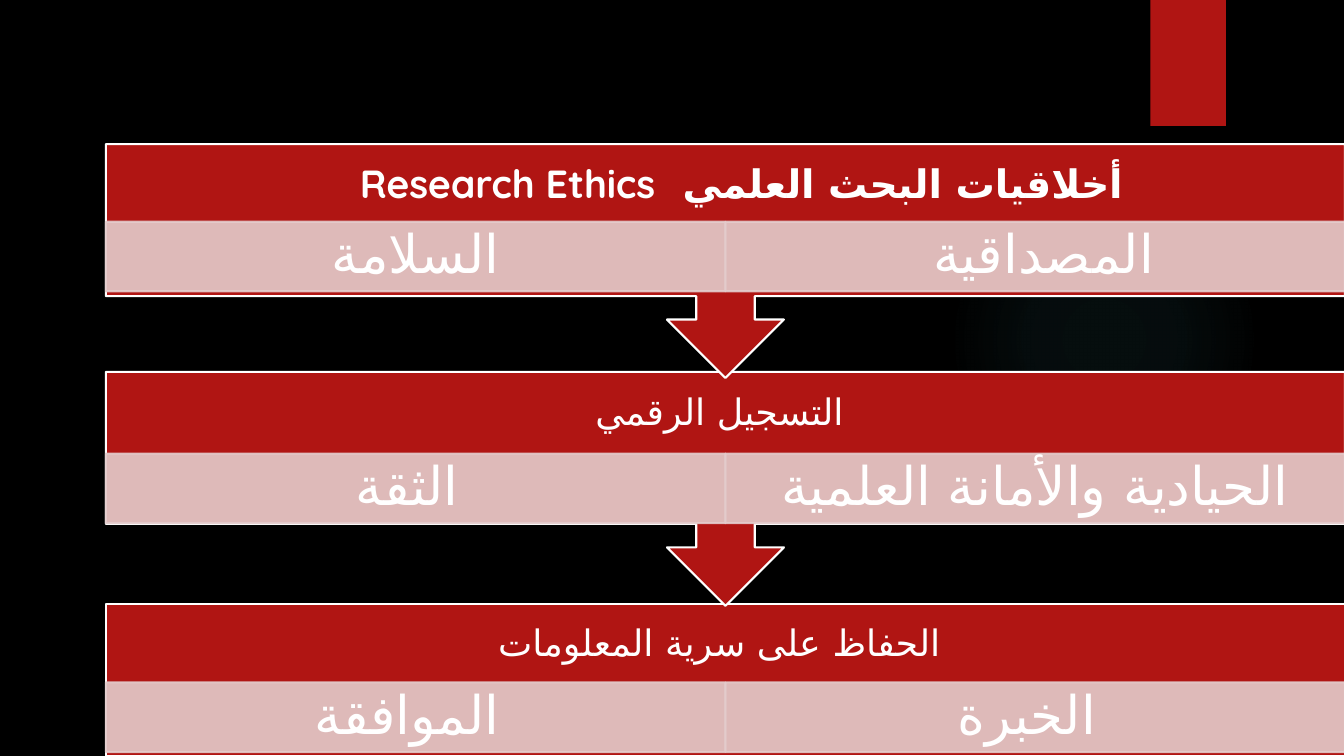
from dataclasses import dataclass

from lxml import etree
from pptx import Presentation
from pptx.dml.color import RGBColor
from pptx.enum.shapes import MSO_SHAPE as Shape
from pptx.enum.text import MSO_ANCHOR as Anchor, PP_ALIGN as Align
from pptx.oxml import parse_xml
from pptx.oxml.ns import qn
from pptx.util import Inches, Pt


@dataclass(frozen=True)
class Theme:
    black: RGBColor = RGBColor.from_string("000000")
    red: RGBColor = RGBColor.from_string("B01513")
    pink: RGBColor = RGBColor.from_string("E4CCCC")
    white: RGBColor = RGBColor.from_string("FFFFFF")
    glow: str = "50B9C1"
    font: str = "Quicksand"
    arabic_font: str = "DejaVu Sans"
    title_size: int = 28
    header_size: int = 26
    cell_size: int = 38


theme = Theme()


def add_block(shape_kind, left, top, width, height, color, line_color=None):
    block = page.shapes.add_shape(
        shape_kind, Inches(left), Inches(top), Inches(width), Inches(height))
    block.shadow.inherit = False
    block.fill.solid()
    block.fill.fore_color.rgb = color
    if line_color is None:
        block.line.fill.background()
    else:
        block.line.color.rgb = line_color
        block.line.width = Pt(1.5)
    return block


def write(box, text, insets, size, bold=False, rtl=False):
    """Centre one line of text; insets are left, top, right, bottom."""
    frame = box.text_frame
    left, top, right, bottom = map(Inches, insets)
    frame_format = {"word_wrap": True, "vertical_anchor": Anchor.MIDDLE,
                    "margin_left": left, "margin_top": top,
                    "margin_right": right, "margin_bottom": bottom}
    for name, value in frame_format.items():
        setattr(frame, name, value)
    para = frame.paragraphs[0]
    para.alignment = Align.CENTER
    para.line_spacing = 0.9
    if rtl:
        para._p.get_or_add_pPr().set("rtl", "1")
    span = para.add_run()
    span.text = text
    for name, value in {"name": theme.font, "size": Pt(size), "bold": bold}.items():
        setattr(span.font, name, value)
    span.font.color.rgb = theme.white
    complex_font = etree.SubElement(span._r.get_or_add_rPr(), qn("a:cs"))
    complex_font.set("typeface", theme.arabic_font)


deck = Presentation()
deck.slide_width, deck.slide_height = Inches(13.33), Inches(7.5)
page = deck.slides.add_slide(deck.slide_layouts[6])
page.background.fill.solid()
page.background.fill.fore_color.rgb = theme.black

# Faint round glow and the red tab at the top
glow = add_block(Shape.OVAL, 9.41, 1.83, 3.08, 3.08, theme.black)
stops = "".join(
    f'<a:gs pos="{place * 1000}"><a:srgbClr val="{theme.glow}">'
    f'<a:alpha val="{alpha * 1000}"/></a:srgbClr></a:gs>'
    for place, alpha in [(0, 7), (36, 6), (69, 0)])
gradient = parse_xml(
    '<a:gradFill xmlns:a="http://schemas.openxmlformats.org/drawingml/2006/main">'
    f'<a:gsLst>{stops}</a:gsLst><a:path path="circle">'
    '<a:fillToRect l="50000" t="50000" r="50000" b="50000"/></a:path></a:gradFill>')
solid = glow._element.spPr.find(qn("a:solidFill"))
solid.getparent().replace(solid, gradient)
add_block(Shape.RECTANGLE, 11.41, 0, 0.75, 1.25, theme.red)

# Three stages, stacked from the bottom so that each arrow overlaps the next one
stage_left, stage_width = 1.05, 12.29
cell_width = stage_width / 2
header_height, cell_height = 0.82, 0.69
title_format = {"insets": (0.4, 0.22, 0.22, 0.22), "size": theme.title_size,
                "bold": True, "rtl": True}
header_format = {"insets": (0.2,) * 4, "size": theme.header_size}
cell_format = {"insets": (0.3, 0.05, 0.3, 0.05), "size": theme.cell_size}
callout = Shape.UP_ARROW_CALLOUT

# shape, top, height, rotation, cell top, header, header format, cells (left, right)
stages = [
    (Shape.RECTANGLE, 5.99, 1.51, 0, 6.77, "الحفاظ على سرية المعلومات ",
     header_format, ("الموافقة ", "الخبرة ")),
    (callout, 3.69, 2.32, 180, 4.5, "التسجيل الرقمي ",
     header_format, ("الثقة ", "الحيادية والأمانة العلمية")),
    (callout, 1.43, 2.32, 180, 2.2, "أخلاقيات البحث العلمي  Research Ethics ",
     title_format, ("السلامة", "المصداقية ")),
]
for kind, top, height, rotation, cell_top, header, text_format, cells in stages:
    stage = add_block(kind, stage_left, top, stage_width, height, theme.red, theme.white)
    stage.rotation = rotation
    header_box = page.shapes.add_textbox(
        Inches(stage_left), Inches(top), Inches(stage_width), Inches(header_height))
    write(header_box, header, **text_format)

    for column, text in enumerate(cells):
        cell = add_block(Shape.RECTANGLE, stage_left + column * cell_width, cell_top,
                         cell_width, cell_height, theme.pink, theme.pink)
        for color in cell._element.spPr.iter(qn("a:srgbClr")):
            etree.SubElement(color, qn("a:alpha")).set("val", "90000")
        write(cell, text, rtl=text == "المصداقية ", **cell_format)

deck.save("out.pptx")
